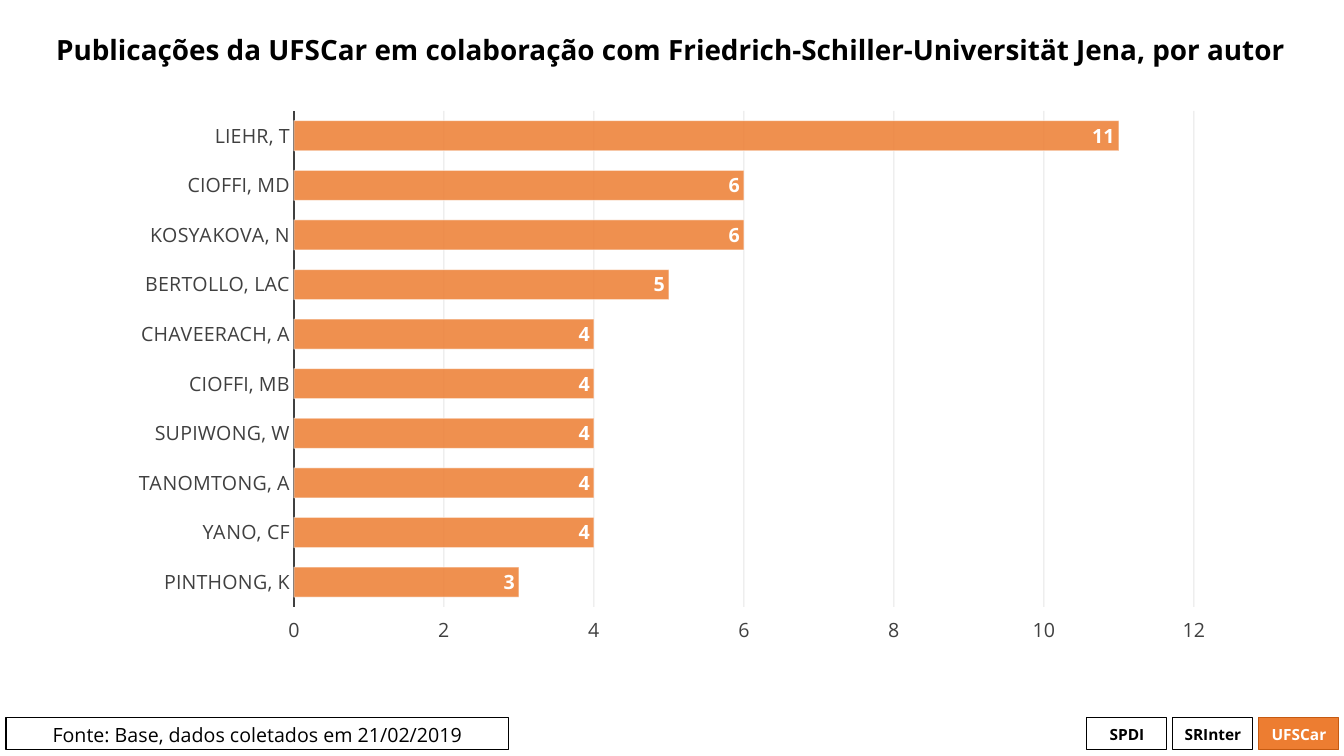
from dataclasses import dataclass

from lxml import etree
from pptx import Presentation
from pptx.chart.data import CategoryChartData
from pptx.dml.color import RGBColor
from pptx.enum.chart import (XL_CHART_TYPE, XL_LABEL_POSITION, XL_TICK_LABEL_POSITION,
                             XL_TICK_MARK)
from pptx.enum.shapes import MSO_SHAPE
from pptx.enum.text import MSO_ANCHOR, MSO_AUTO_SIZE, PP_ALIGN
from pptx.oxml import parse_xml
from pptx.oxml.ns import nsdecls, qn
from pptx.util import Pt

# Content
TITLE = ("Publicações da UFSCar em colaboração com "
         "Friedrich-Schiller-Universität Jena, por autor")
PUBLICATIONS = [
    ("LIEHR, T", 11), ("CIOFFI, MD", 6), ("KOSYAKOVA, N", 6),
    ("BERTOLLO, LAC", 5), ("CHAVEERACH, A", 4), ("CIOFFI, MB", 4),
    ("SUPIWONG, W", 4), ("TANOMTONG, A", 4), ("YANO, CF", 4),
    ("PINTHONG, K", 3),
]
SOURCE = "Fonte: Base, dados coletados em 21/02/2019"
UNITS = ["SPDI", "SRInter", "UFSCar"]
HIGHLIGHTED_UNIT = "UFSCar"


@dataclass(frozen=True)
class Theme:
    font: str = "Open Sans"
    black: RGBColor = RGBColor(0, 0, 0)
    white: RGBColor = RGBColor(255, 255, 255)
    orange: RGBColor = RGBColor(0xED, 0x7D, 0x31)
    dark_orange: RGBColor = RGBColor(0xC5, 0x5A, 0x11)
    axis: RGBColor = RGBColor(0x40, 0x40, 0x40)
    grid: RGBColor = RGBColor(0x0D, 0x0D, 0x0D)
    title_size: float = 19.9
    body_size: int = 14
    unit_size: int = 11
    thin: float = 0.75


THEME = Theme()

# Geometry in px
SLIDE = (1344, 756)
TITLE_BOX = (46, 6, 1251, 92)
CHART_BOX = (116, 100, 1111, 555)
PLOT_BOX = (294, 111, 900, 496)
FOOTER_TOP, FOOTER_HEIGHT = 718, 32
SOURCE_LEFT, SOURCE_WIDTH = 6, 503
UNIT_LEFT, UNIT_WIDTH, UNIT_STEP = 1087, 80, 86


def px(length):
    return round(length * 914400 / 100.8)


def set_font(font, size, color, bold=False):
    font.name, font.size, font.bold = THEME.font, Pt(size), bold
    font.color.rgb = color


def set_line(line, color, width):
    line.color.rgb = color
    line.width = Pt(width)


def set_alpha(fill_parent, percent):
    color = next(fill_parent.iter(qn("a:srgbClr")))
    etree.SubElement(color, qn("a:alpha")).set("val", str(percent * 1000))


def add_box(slide, text, left, width, size, bold=False, highlighted=False):
    box = slide.shapes.add_shape(
        MSO_SHAPE.RECTANGLE, px(left), px(FOOTER_TOP), px(width), px(FOOTER_HEIGHT))
    box.shadow.inherit = False
    if highlighted:
        box.fill.solid()
        box.fill.fore_color.rgb = THEME.orange
    else:
        box.fill.background()
    set_line(box.line, THEME.dark_orange if highlighted else THEME.black, THEME.thin)
    frame = box.text_frame
    frame.word_wrap = True
    frame.margin_left = frame.margin_right = 0
    frame.text = text
    paragraph = frame.paragraphs[0]
    paragraph.alignment = PP_ALIGN.CENTER
    set_font(paragraph.font, size, THEME.white if highlighted else THEME.black, bold)
    return box


def add_footer(slide):
    for index, unit in enumerate(UNITS):
        add_box(slide, unit, UNIT_LEFT + index * UNIT_STEP, UNIT_WIDTH,
                THEME.unit_size, True, unit == HIGHLIGHTED_UNIT)
    source = add_box(slide, SOURCE, SOURCE_LEFT, SOURCE_WIDTH, THEME.body_size)
    source.text_frame.vertical_anchor = MSO_ANCHOR.TOP


def add_title(slide):
    title = slide.shapes.title
    title.left, title.top, title.width, title.height = map(px, TITLE_BOX)
    frame = title.text_frame
    frame.text = TITLE
    frame.word_wrap = True
    frame.auto_size = MSO_AUTO_SIZE.NONE
    frame.vertical_anchor = MSO_ANCHOR.MIDDLE
    frame.margin_right = 0
    paragraph = frame.paragraphs[0]
    paragraph.alignment = PP_ALIGN.LEFT
    paragraph.line_spacing = 0.9
    set_font(paragraph.font, THEME.title_size, THEME.black, True)


def place_plot(chart):
    left, top, width, height = CHART_BOX
    plot_left, plot_top, plot_width, plot_height = PLOT_BOX
    fractions = {"x": (plot_left - left) / width, "y": (plot_top - top) / height,
                 "w": plot_width / width, "h": plot_height / height}
    modes = "".join(f'<c:{side}Mode val="edge"/>' for side in "xy")
    values = "".join(f'<c:{side} val="{part:.4f}"/>' for side, part in fractions.items())
    layout = parse_xml(
        f'<c:layout {nsdecls("c")}><c:manualLayout><c:layoutTarget val="inner"/>'
        f'{modes}{values}</c:manualLayout></c:layout>')
    plot_area = next(chart.element.iter(qn("c:plotArea")))
    for automatic in plot_area.findall(qn("c:layout")):
        plot_area.remove(automatic)
    plot_area.insert(0, layout)


def format_axes(chart):
    authors, counts = chart.category_axis, chart.value_axis
    for axis in (authors, counts):
        axis.major_tick_mark = axis.minor_tick_mark = XL_TICK_MARK.NONE
        set_font(axis.tick_labels.font, THEME.body_size, THEME.axis)
    # Reversed authors put the high end, and so the count labels, at the bottom
    authors.reverse_order = True
    counts.tick_label_position = XL_TICK_LABEL_POSITION.HIGH
    authors.has_major_gridlines = False
    set_line(authors.format.line, THEME.axis, 1.5)
    counts.minimum_scale, counts.maximum_scale, counts.major_unit = 0, 12, 2
    counts.format.line.fill.background()
    counts.has_major_gridlines = True
    set_line(counts.major_gridlines.format.line, THEME.grid, THEME.thin)
    set_alpha(next(chart.element.iter(qn("c:majorGridlines"))), 10)


def format_bars(chart):
    plot = chart.plots[0]
    plot.gap_width = 65
    plot.vary_by_categories = False
    bars = plot.series[0]
    bars.format.fill.solid()
    bars.format.fill.fore_color.rgb = THEME.orange
    set_line(bars.format.line, THEME.white, THEME.thin)
    properties = next(chart.element.iter(qn("c:ser"))).find(qn("c:spPr"))
    set_alpha(properties.find(qn("a:solidFill")), 85)
    set_alpha(properties.find(qn("a:ln")), 50)
    labels = bars.data_labels
    labels.show_value = True
    labels.position = XL_LABEL_POSITION.INSIDE_END
    set_font(labels.font, THEME.body_size, THEME.white, True)


def add_publications_chart(slide):
    data = CategoryChartData()
    data.categories = [author for author, _ in PUBLICATIONS]
    data.add_series("Series 1", [count for _, count in PUBLICATIONS])
    chart = slide.shapes.add_chart(
        XL_CHART_TYPE.BAR_CLUSTERED, *map(px, CHART_BOX), data).chart
    chart.has_legend = chart.has_title = False
    set_font(chart.font, THEME.body_size, THEME.black)
    background = parse_xml(
        f'<c:spPr {nsdecls("c", "a")}><a:solidFill><a:srgbClr val="{THEME.white}"/>'
        '</a:solidFill><a:ln><a:noFill/></a:ln></c:spPr>')
    chart.element.find(qn("c:chart")).addnext(background)
    place_plot(chart)
    format_axes(chart)
    format_bars(chart)


def main():
    presentation = Presentation()
    presentation.slide_width, presentation.slide_height = map(px, SLIDE)
    slide = presentation.slides.add_slide(presentation.slide_layouts[5])
    add_footer(slide)
    add_title(slide)
    add_publications_chart(slide)
    presentation.save("out.pptx")


if __name__ == "__main__":
    main()
